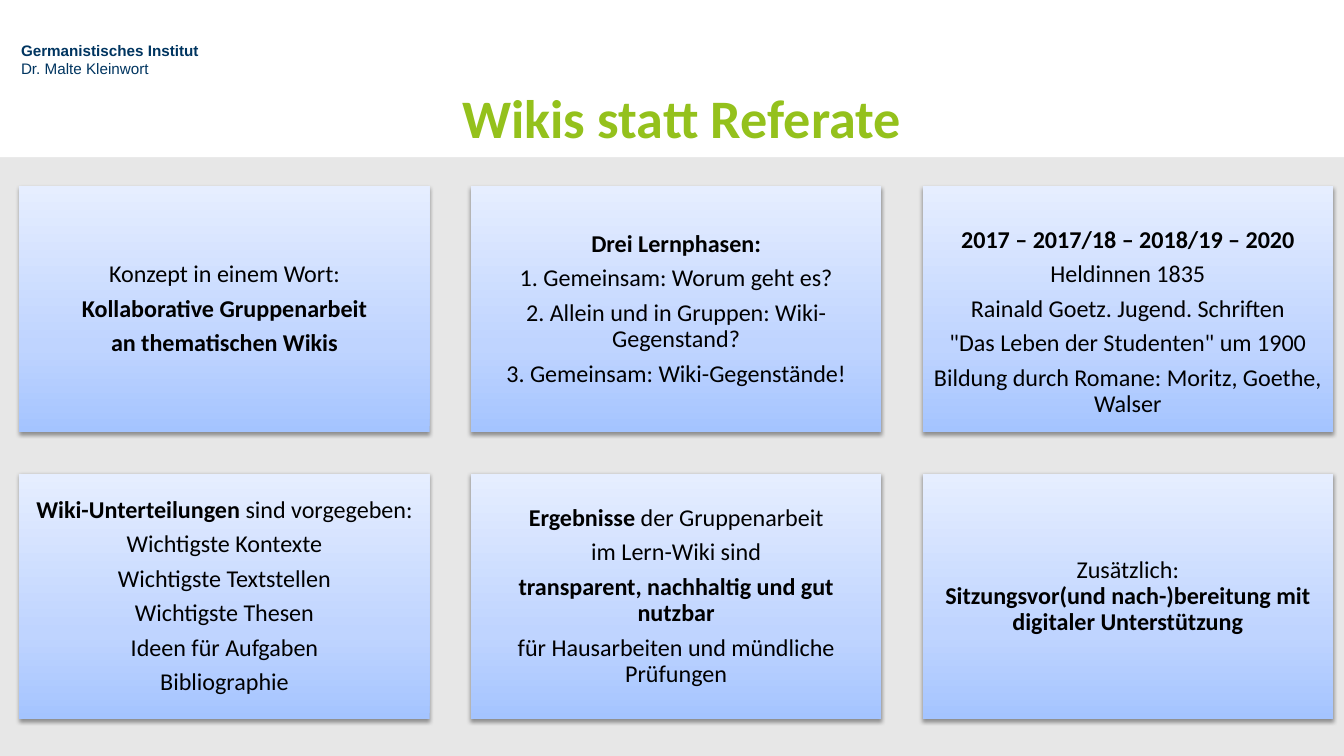
import copy
import dataclasses

import lxml.etree
import pptx
import pptx.dml.color
import pptx.enum.shapes
import pptx.enum.text
import pptx.oxml.ns
import pptx.util


@dataclasses.dataclass(frozen=True)
class Theme:
    page: str = "E7E7E7"
    band: str = "FFFFFF"
    institute: str = "003560"
    title: str = "94C11C"
    body: str = "000000"
    card_gradient: tuple = ((0, "A4C4FF"), (0.35, "BFD4FF"), (1, "E6EEFF"))
    heading_font: str = "Calibri"
    institute_font: str = "Arial"
    institute_size: float = 12
    title_size: float = 42.7
    body_size: float = 19


@dataclasses.dataclass(frozen=True)
class Grid:
    """Card grid in inches."""
    left: float = 0.21
    top: float = 2.04
    column_step: float = 4.94
    row_step: float = 3.14
    card_width: float = 4.49
    card_height: float = 2.69
    columns: int = 3

    def cell(self, index):
        row, column = divmod(index, self.columns)
        return (self.left + column * self.column_step, self.top + row * self.row_step,
                self.card_width, self.card_height)


SLIDE_SIZE = (14.7, 8.27)
CARD_INSET = 0.08

# Double asterisks enclose bold text; a newline is a line break.
CARDS = [
    ["Konzept in einem Wort:", "**Kollaborative Gruppenarbeit**",
     "**an thematischen Wikis**"],
    ["**Drei Lernphasen:**", "1. Gemeinsam: Worum geht es?",
     "2. Allein und in Gruppen: Wiki-Gegenstand?",
     "3. Gemeinsam: Wiki-Gegenstände!"],
    ["**2017 – 2017/18 – 2018/19 – 2020**", "Heldinnen 1835",
     "Rainald Goetz. Jugend. Schriften", '"Das Leben der Studenten" um 1900',
     "Bildung durch Romane: Moritz, Goethe, Walser"],
    ["**Wiki-Unterteilungen** sind vorgegeben:", "Wichtigste Kontexte",
     "Wichtigste Textstellen", "Wichtigste Thesen", "Ideen für Aufgaben",
     "Bibliographie"],
    ["**Ergebnisse** der Gruppenarbeit", "im Lern-Wiki sind",
     "**transparent, nachhaltig und gut nutzbar**",
     "für Hausarbeiten und mündliche Prüfungen"],
    ["Zusätzlich:\n**Sitzungsvor(und nach-)bereitung mit digitaler Unterstützung**"],
]
EXTRA_TOP_INSET = {2: 0.28}  # the list of seminars sits one line lower


def rgb(value):
    return pptx.dml.color.RGBColor.from_string(value)


def inches(box):
    return [pptx.util.Inches(length) for length in box]


class SlideBuilder:
    def __init__(self, slide, theme, grid):
        self.slide, self.theme, self.grid = slide, theme, grid
        slide.background.fill.solid()
        slide.background.fill.fore_color.rgb = rgb(theme.page)

    def rectangle(self, box):
        shape = self.slide.shapes.add_shape(
            pptx.enum.shapes.MSO_SHAPE.RECTANGLE, *inches(box))
        shape.shadow.inherit = False
        shape.line.fill.background()
        return shape

    def band(self, box):
        fill = self.rectangle(box).fill
        fill.solid()
        fill.fore_color.rgb = rgb(self.theme.band)

    def frame(self, shape, insets, anchor):
        frame = shape.text_frame
        frame.word_wrap = True
        frame.vertical_anchor = anchor
        (frame.margin_left, frame.margin_top,
         frame.margin_right, frame.margin_bottom) = inches(insets)
        return frame

    def fill_text(self, frame, texts, font, size, color, centred=True):
        """Fill the frame with marked-up paragraphs and return them."""
        for number, text in enumerate(texts):
            paragraph = frame.add_paragraph() if number else frame.paragraphs[0]
            if centred:
                paragraph.alignment = pptx.enum.text.PP_ALIGN.CENTER
            paragraph.font.name = font
            paragraph.font.size = pptx.util.Pt(size)
            paragraph.font.color.rgb = rgb(color)
            for line_number, line in enumerate(text.split("\n")):
                if line_number:
                    paragraph.add_line_break()
                for part_number, part in enumerate(line.split("**")):
                    if part:
                        run = paragraph.add_run()
                        run.text = part
                        run.font.bold = part_number % 2 == 1
        return frame.paragraphs

    def label(self, box, text, font, size, color, insets, centred):
        textbox = self.slide.shapes.add_textbox(*inches(box))
        frame = self.frame(textbox, insets, pptx.enum.text.MSO_ANCHOR.TOP)
        self.fill_text(frame, [text], font, size, color, centred)

    def card_style(self, card):
        """Three-stop gradient, dark at the bottom, and a soft drop shadow."""
        qn = pptx.oxml.ns.qn
        card.fill.gradient()
        card.fill.gradient_angle = 90
        stop_list = card.element.spPr.find(".//" + qn("a:gsLst"))
        stop_list.insert(1, copy.deepcopy(stop_list[0]))
        for stop, (position, color) in zip(card.fill.gradient_stops,
                                           self.theme.card_gradient):
            stop.position = position
            stop.color.rgb = rgb(color)
        effects = card.element.spPr.find(qn("a:effectLst"))
        shadow = lxml.etree.SubElement(
            effects, qn("a:outerShdw"), blurRad="40000", dist="20000",
            dir="5400000", rotWithShape="0")
        tint = lxml.etree.SubElement(shadow, qn("a:srgbClr"), val="000000")
        lxml.etree.SubElement(tint, qn("a:alpha"), val="38000")

    def card(self, index, texts):
        theme = self.theme
        card = self.rectangle(self.grid.cell(index))
        self.card_style(card)
        top = CARD_INSET + EXTRA_TOP_INSET.get(index, 0)
        frame = self.frame(card, (CARD_INSET, top, CARD_INSET, CARD_INSET),
                           pptx.enum.text.MSO_ANCHOR.MIDDLE)
        for paragraph in self.fill_text(frame, texts, theme.heading_font,
                                        theme.body_size, theme.body):
            paragraph.line_spacing = 0.9
            paragraph.space_after = pptx.util.Pt(0.35 * theme.body_size)


def main():
    presentation = pptx.Presentation()
    presentation.slide_width, presentation.slide_height = inches(SLIDE_SIZE)
    theme, grid = Theme(), Grid()
    slide = presentation.slides.add_slide(presentation.slide_layouts[6])
    builder = SlideBuilder(slide, theme, grid)
    width = SLIDE_SIZE[0]

    builder.band((0, 0, width, 1.72))
    builder.label((0.23, 0.45, 2.85, 0.63),
                  "**Germanistisches Institut**\nDr. Malte Kleinwort",
                  theme.institute_font, theme.institute_size, theme.institute,
                  (0, 0, 0, 0), centred=False)
    builder.label((grid.left, 0.87, width - grid.left, 0.82),
                  "**Wikis statt Referate**",
                  theme.heading_font, theme.title_size, theme.title,
                  (0.1, 0.05, 0.1, 0.05), centred=True)
    for index, texts in enumerate(CARDS):
        builder.card(index, texts)
    presentation.save("out.pptx")


if __name__ == "__main__":
    main()
